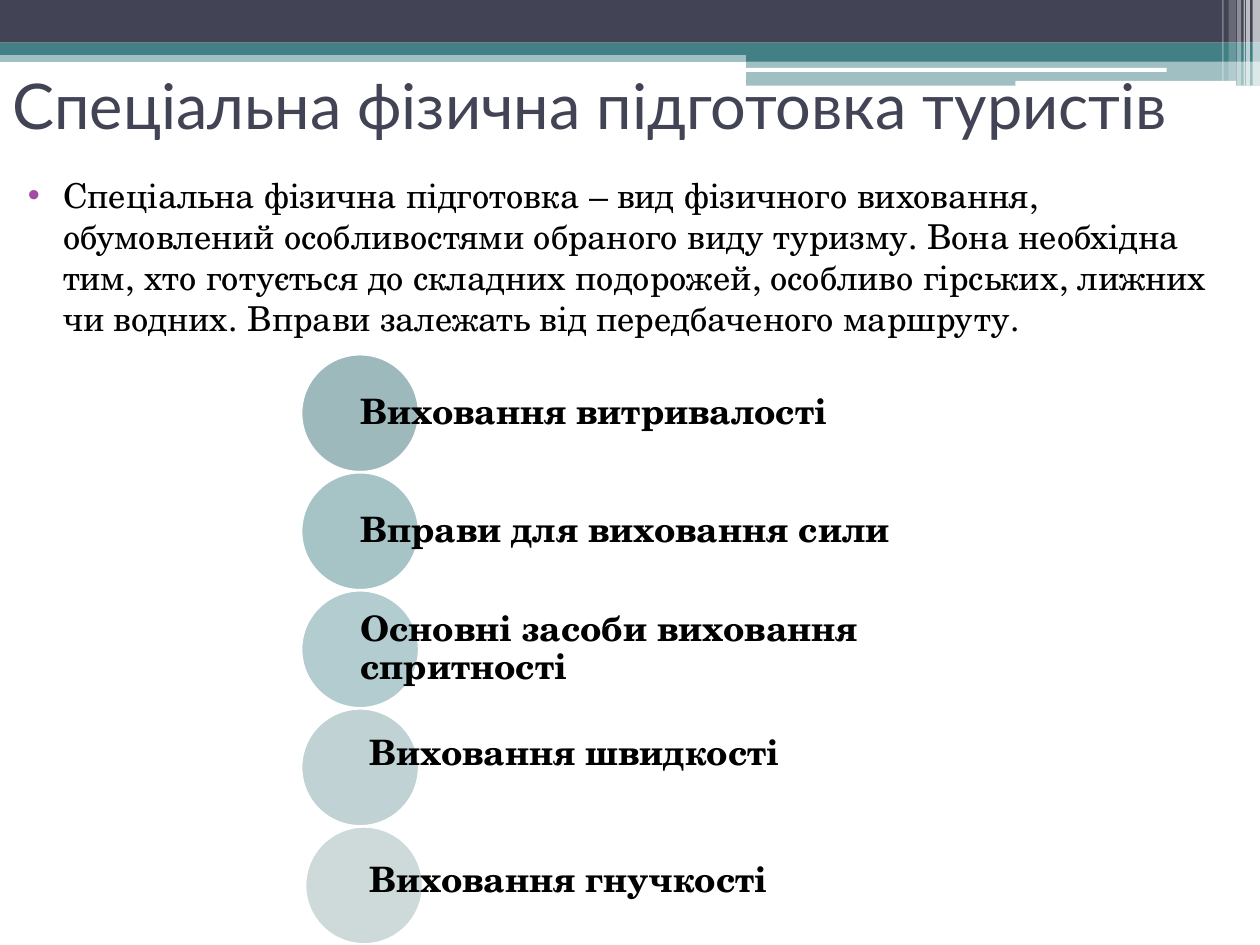
from lxml.etree import SubElement
from pptx import Presentation
from pptx.dml.color import RGBColor
from pptx.enum.shapes import MSO_SHAPE
from pptx.enum.text import MSO_ANCHOR, MSO_AUTO_SIZE, PP_ALIGN
from pptx.oxml.ns import qn
from pptx.util import Cm, Pt

HUES = {
    "dark": "424456", "teal": "438086", "white": "FFFFFF",
    "black": "000000", "dot": "A04DA3",
}
DISCS = ["3D747A", "4F898F", "669AA0", "83A6AA", "9FB4B6"]
SERIF = "TeX Gyre Schola"
STEP = 2.38

TITLE = "Спеціальна фізична підготовка туристів"
BODY = (
    "Спеціальна фізична підготовка – вид фізичного виховання, "
    "обумовлений особливостями обраного виду туризму. Вона необхідна "
    "тим, хто готується до складних подорожей, особливо гірських, лижних "
    "чи водних. Вправи залежать від передбаченого маршруту."
)
ITEMS = [
    "Виховання витривалості",
    "Вправи для виховання сили",
    "Основні засоби виховання спритності",
]
EXTRAS = [("Виховання швидкості", 7.46), ("Виховання гнучкості", 10.01)]


def write(frame, text, font=SERIF, size=20, hue="black", bold=False,
          anchor=MSO_ANCHOR.TOP, pads=(0.25, 0.13, 0.25, 0.13), lead=None):
    frame.word_wrap = True
    frame.auto_size = MSO_AUTO_SIZE.NONE
    frame.vertical_anchor = anchor
    (frame.margin_left, frame.margin_top,
     frame.margin_right, frame.margin_bottom) = map(Cm, pads)
    par = frame.paragraphs[0]
    par.alignment = PP_ALIGN.LEFT
    if lead:
        par.line_spacing = lead
    run = par.add_run()
    run.text = text
    run.font.name = font
    run.font.size = Pt(size)
    run.font.bold = bold
    run.font.color.rgb = RGBColor.from_string(HUES[hue])
    return par


def draw(slide, kind, box, hue, alpha=100):
    shape = slide.shapes.add_shape(kind, *map(Cm, box))
    shape.shadow.inherit = False
    shape.fill.solid()
    shape.fill.fore_color.rgb = RGBColor.from_string(hue)
    if alpha < 100:
        tint = next(shape.element.iter(qn("a:srgbClr")))
        SubElement(tint, qn("a:alpha"), val=str(alpha * 1000))
    shape.line.fill.background()
    return shape


def place(shape, box):
    shape.left, shape.top, shape.width, shape.height = map(Cm, box)
    shape.element.getparent().append(shape.element)


def banner(slide, left, top, width):
    mid = 15.04
    bars = [
        (0, 1.02, width, 0.23, "teal", 50),
        (0, 0, width, 0.86, "dark", 100),
        (0, 0.86, width, 0.25, "teal", 100),
        (mid, 0.99, width - mid, 0.25, "teal", 100),
        (mid, 1.22, width - mid, 0.51, "teal", 50),
    ]
    for x, y, w, h, hue, alpha in bars:
        draw(slide, MSO_SHAPE.RECTANGLE, (left + x, top + y, w, h), HUES[hue], alpha)
    for x, y, w, h in [(15.01, 1.37, 8.51, 0.08), (20.47, 1.63, 4.45, 0.1)]:
        draw(slide, MSO_SHAPE.ROUNDED_RECTANGLE, (left + x, top + y, w, h), HUES["white"])
    stripes = [
        (25.25, 0.15, 1.73, 65), (25.12, 0.08, 1.73, 65),
        (25.07, 0.03, 1.73, 60), (24.94, 0.08, 1.73, 40),
        (24.77, 0.15, 1.63, 20), (24.64, 0.03, 1.63, 30),
    ]
    for x, w, h, alpha in stripes:
        draw(slide, MSO_SHAPE.RECTANGLE, (left + x, top, w, h), HUES["white"], alpha)


def heading(slide, box):
    title = slide.shapes.title
    place(title, box)
    write(title.text_frame, TITLE, font="Lato", size=36, hue="dark",
          anchor=MSO_ANCHOR.MIDDLE, pads=(0.25, 0.13, 0.25, 1.4))


def intro(slide, box):
    body = slide.placeholders[1]
    place(body, box)
    par = write(body.text_frame, BODY, size=19.6)
    par.space_before = Pt(3)
    props = par._p.get_or_add_pPr()
    props.set("marL", str(Cm(1.02)))
    props.set("indent", str(-Cm(0.71)))
    tint = SubElement(props, qn("a:buClr"))
    SubElement(tint, qn("a:srgbClr"), val=HUES["dot"])
    SubElement(props, qn("a:buFont"), typeface="Arial")
    SubElement(props, qn("a:buChar"), char="•")


def label(slide, text, box, **style):
    note = slide.shapes.add_textbox(*map(Cm, box))
    write(note.text_frame, text, bold=True, **style)


def skills(slide, left, top):
    last = len(DISCS) - 1
    for row, hue in enumerate(DISCS):
        x = left + (0.08 if row == last else 0)
        y = top + row * STEP
        disc = draw(slide, MSO_SHAPE.OVAL, (x, y, STEP, STEP), hue, 50)
        disc.line.color.rgb = RGBColor.from_string(HUES["white"])
        disc.line.width = Pt(1.5)
        if row < len(ITEMS):
            label(slide, ITEMS[row], (left + STEP / 2, y, 12.7, STEP),
                  anchor=MSO_ANCHOR.MIDDLE, pads=(0, 0.08, 0, 0.08), lead=0.9)
    for text, drop in EXTRAS:
        label(slide, text, (left + 1.12, top + drop, 9.53, 1.12))


def main():
    deck = Presentation()
    deck.slide_width, deck.slide_height = Cm(25.4), Cm(19.05)
    slide = deck.slides.add_slide(deck.slide_layouts[1])
    banner(slide, 0, 0, 25.4)
    heading(slide, (0, 1.47, 25.4, 2.54))
    intro(slide, (0, 3.38, 25.4, 3.61))
    skills(slide, 6.07, 7.14)
    deck.save("out.pptx")


if __name__ == "__main__":
    main()
